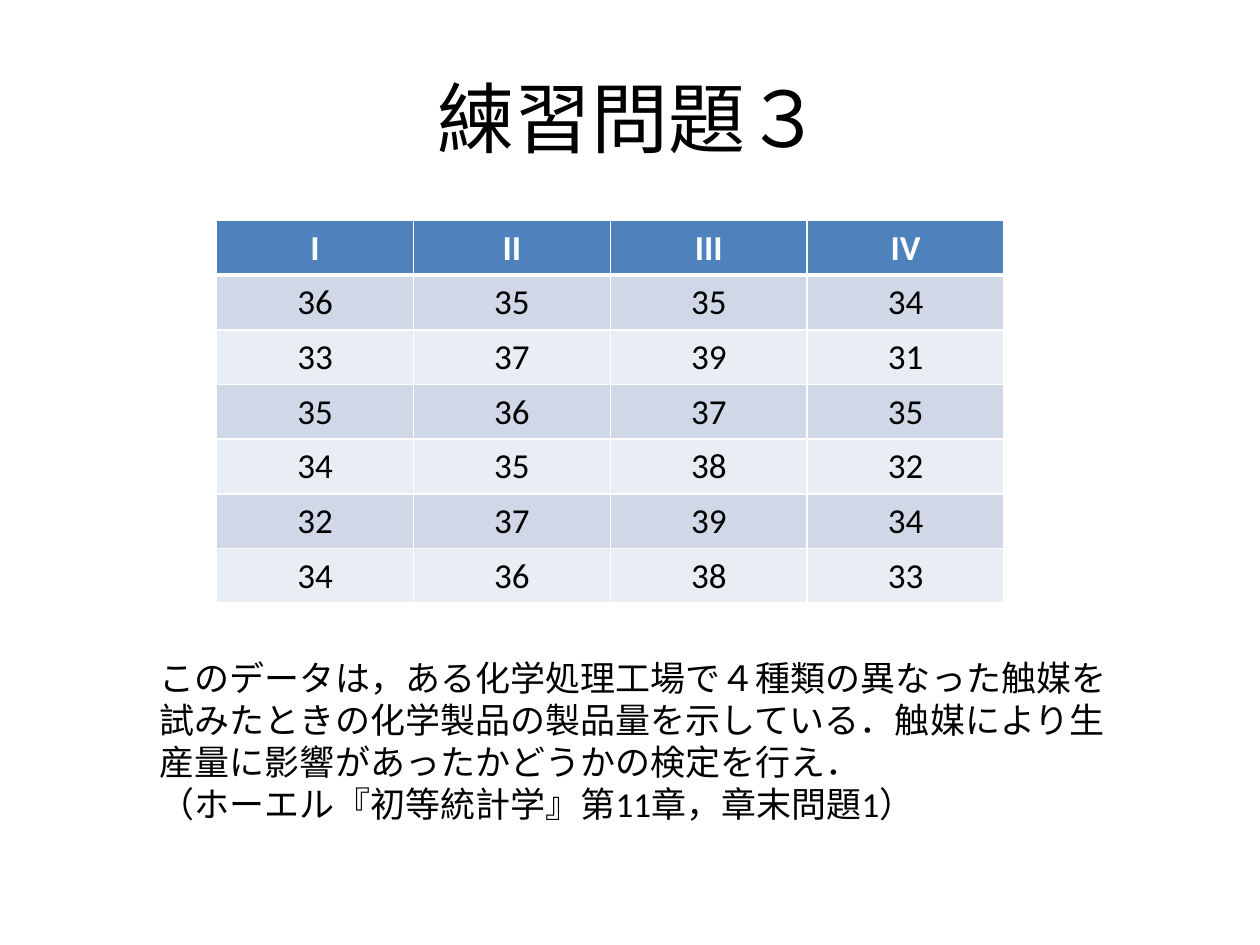
import pptx
import pptx.dml.color
import pptx.enum.text
import pptx.oxml
import pptx.oxml.ns
import pptx.util
from pptx.util import Inches

FONT = "Calibri"
ALIGN = pptx.enum.text.PP_ALIGN
ANCHOR = pptx.enum.text.MSO_ANCHOR

TITLE = "練習問題３"
CATALYSTS = ["I", "II", "III", "IV"]
OUTPUTS = [
    [36, 35, 35, 34],
    [33, 37, 39, 31],
    [35, 36, 37, 35],
    [34, 35, 38, 32],
    [32, 37, 39, 34],
    [34, 36, 38, 33],
]
QUESTION = [
    "このデータは，ある化学処理工場で４種類の異なった触媒を試みたときの化学製品の製品量を示している．"
    "触媒により生産量に影響があったかどうかの検定を行え．",
    "（ホーエル『初等統計学』第11章，章末問題1）",
]


def rgb(color):
    return pptx.dml.color.RGBColor.from_string(color)


def style(p, size, color="000000", align=ALIGN.LEFT, bold=False):
    p.alignment = align
    p.font.name = FONT
    p.font.size = pptx.util.Pt(size)
    p.font.bold = bold
    p.font.color.rgb = rgb(color)


def add_text(s, box, paragraphs, size, align=ALIGN.LEFT, anchor=ANCHOR.TOP):
    tf = s.shapes.add_textbox(*map(Inches, box)).text_frame
    tf.word_wrap = True
    tf.vertical_anchor = anchor
    tf.text = "\n".join(paragraphs)
    for p in tf.paragraphs:
        style(p, size, align=align)
    return tf


def add_border(cell, side, width):
    cell._tc.get_or_add_tcPr().append(pptx.oxml.parse_xml(
        f'<a:{side} {pptx.oxml.ns.nsdecls("a")} w="{pptx.util.Pt(width)}">'
        f'<a:solidFill><a:srgbClr val="FFFFFF"/></a:solidFill></a:{side}>'))


def fill_cell(cell, value, row):
    header = row == 0
    # Borders: a thick rule under the header, thin lines elsewhere
    for side in ("lnL", "lnR", "lnT", "lnB") if header else ("lnL", "lnR", "lnB"):
        add_border(cell, side, 3 if header and side == "lnB" else 1)
    cell.fill.solid()
    band = "D0D8E8" if row % 2 else "E9EDF4"
    cell.fill.fore_color.rgb = rgb("4F81BD" if header else band)
    cell.vertical_anchor = ANCHOR.MIDDLE
    cell.text = str(value)
    style(cell.text_frame.paragraphs[0], 20, "FFFFFF" if header else "000000",
          ALIGN.CENTER, header)


def add_data_table(s, box, rows):
    table = s.shapes.add_table(len(rows), len(rows[0]), *map(Inches, box)).table
    for i, values in enumerate(rows):
        for j, value in enumerate(values):
            fill_cell(table.cell(i, j), value, i)


def main():
    prs = pptx.Presentation()
    prs.slide_width, prs.slide_height = Inches(10), Inches(7.5)
    s = prs.slides.add_slide(prs.slide_layouts[6])

    # Title
    add_text(s, (0.5, 0.3, 9, 1.25), [TITLE], 44, ALIGN.CENTER, ANCHOR.MIDDLE)

    # Output by catalyst
    add_data_table(s, (1.72, 1.75, 6.25, 3.03), [CATALYSTS] + OUTPUTS)

    # Question and its source
    tf = add_text(s, (1.17, 5.16, 7.73, 1.45), QUESTION, 20)
    tf.auto_size = pptx.enum.text.MSO_AUTO_SIZE.SHAPE_TO_FIT_TEXT

    prs.save("out.pptx")


if __name__ == "__main__":
    main()
